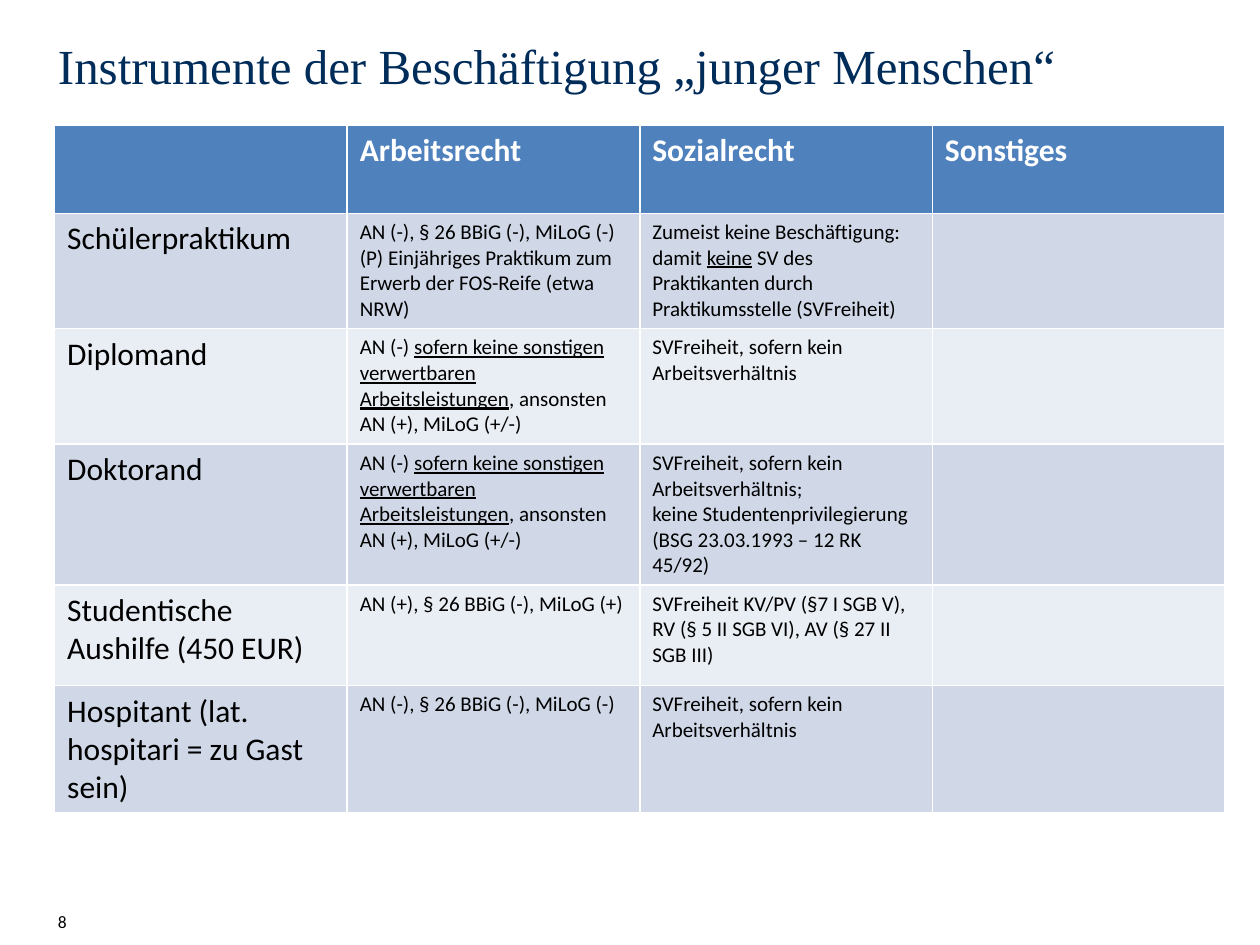
from dataclasses import dataclass
from typing import NamedTuple

from pptx import Presentation
from pptx.dml.color import RGBColor
from pptx.enum.text import MSO_ANCHOR, MSO_AUTO_SIZE, PP_ALIGN
from pptx.util import Pt


@dataclass(frozen=True)
class Theme:
    title_font: str = "Times New Roman"
    body_font: str = "Calibri"
    title_size: float = 28
    label_size: float = 18
    detail_size: float = 12
    number_size: float = 10
    title_color: str = "002C5A"
    text_color: str = "000000"
    header_text: str = "FFFFFF"
    header_fill: str = "4F81BD"
    band_fills: tuple[str, str] = ("D0D8E8", "E9EDF4")


class Box(NamedTuple):
    left: float
    top: float
    width: float
    height: float

    def lengths(self):
        return [Pt(value) for value in self]


class Piece(NamedTuple):
    text: str
    underline: bool = False


Paragraphs = list[list[Piece]]


class Instrument(NamedTuple):
    name: str
    labour_law: Paragraphs
    social_law: Paragraphs
    height: float


THEME = Theme()
TITLE_BOX = Box(30.24, 23, 669, 70.5)
TABLE_BOX = Box(31.2, 71.7, 668.8, 393)
NUMBER_BOX = Box(30.24, 517.7, 23, 18)
HEADER_HEIGHT = 50.2
HEADERS = ["", "Arbeitsrecht", "Sozialrecht", "Sonstiges"]


def plain(*texts: str) -> Paragraphs:
    return [[Piece(text)] for text in texts]


THESIS_RULE = [[
    Piece("AN (-) "),
    Piece("sofern keine sonstigen verwertbaren Arbeitsleistungen", True),
    Piece(", ansonsten AN (+), MiLoG (+/-)"),
]]
NO_CLAIMS = "AN (-), § 26 BBiG (-), MiLoG (-)"
EXEMPT = "SVFreiheit, sofern kein Arbeitsverhältnis"

INSTRUMENTS = [
    Instrument(
        "Schülerpraktikum",
        plain(NO_CLAIMS, "(P) Einjähriges Praktikum zum Erwerb der FOS-Reife (etwa NRW)"),
        [[Piece("Zumeist keine Beschäftigung: damit "), Piece("keine", True),
          Piece(" SV des Praktikanten durch Praktikumsstelle (SVFreiheit)")]],
        66,
    ),
    Instrument("Diplomand", THESIS_RULE, plain(EXEMPT), 66),
    Instrument(
        "Doktorand",
        THESIS_RULE,
        plain(EXEMPT + ";", "keine Studentenprivilegierung (BSG 23.03.1993 – 12 RK 45/92)"),
        80.4,
    ),
    Instrument(
        "Studentische Aushilfe (450 EUR)",
        plain("AN (+), § 26 BBiG (-), MiLoG (+)"),
        plain("SVFreiheit KV/PV (§7 I SGB V), RV (§ 5 II SGB VI), AV (§ 27 II SGB III)"),
        57.6,
    ),
    Instrument("Hospitant (lat. hospitari = zu Gast sein)", plain(NO_CLAIMS), plain(EXEMPT), 72.8),
]


def apply_format(target, **values) -> None:
    for name, value in values.items():
        setattr(target, name, value)


def style_font(font, name: str, size: float, color: str, **values) -> None:
    apply_format(font, name=name, size=Pt(size), **values)
    font.color.rgb = RGBColor.from_string(color)


def write(frame, paragraphs: Paragraphs, size: float, color: str, bold: bool = False) -> None:
    for index, pieces in enumerate(paragraphs):
        paragraph = frame.add_paragraph() if index else frame.paragraphs[0]
        for piece in pieces:
            run = paragraph.add_run()
            run.text = piece.text
            style_font(run.font, THEME.body_font, size, color, bold=bold)
            if piece.underline:
                run.font.underline = True


def fill_cell(cell, fill: str, paragraphs: Paragraphs, size: float, color: str,
              bold: bool = False) -> None:
    cell.fill.solid()
    cell.fill.fore_color.rgb = RGBColor.from_string(fill)
    if paragraphs:
        write(cell.text_frame, paragraphs, size, color, bold)


def add_title(slide, text: str) -> None:
    title = slide.shapes.title
    title.left, title.top, title.width, title.height = TITLE_BOX.lengths()
    frame = title.text_frame
    inset = Pt(2.88)
    apply_format(frame, text=text, word_wrap=True, auto_size=MSO_AUTO_SIZE.NONE,
                 vertical_anchor=MSO_ANCHOR.TOP, margin_left=inset, margin_right=inset,
                 margin_top=inset, margin_bottom=inset)
    paragraph = frame.paragraphs[0]
    apply_format(paragraph, alignment=PP_ALIGN.LEFT, line_spacing=Pt(28))
    style_font(paragraph.runs[0].font, THEME.title_font, THEME.title_size, THEME.title_color)


def add_instrument_table(slide) -> None:
    table = slide.shapes.add_table(
        len(INSTRUMENTS) + 1, len(HEADERS), *TABLE_BOX.lengths()
    ).table
    for column in table.columns:
        column.width = Pt(TABLE_BOX.width / len(HEADERS))

    table.rows[0].height = Pt(HEADER_HEIGHT)
    for cell, header in zip(table.rows[0].cells, HEADERS):
        fill_cell(cell, THEME.header_fill, plain(header) if header else [],
                  THEME.label_size, THEME.header_text, bold=True)

    for index, instrument in enumerate(INSTRUMENTS):
        row = table.rows[index + 1]
        row.height = Pt(instrument.height)
        fill = THEME.band_fills[index % 2]
        contents = [plain(instrument.name), instrument.labour_law, instrument.social_law, []]
        for column, (cell, paragraphs) in enumerate(zip(row.cells, contents)):
            size = THEME.detail_size if column else THEME.label_size
            fill_cell(cell, fill, paragraphs, size, THEME.text_color)


def add_page_number(slide, number: int) -> None:
    frame = slide.shapes.add_textbox(*NUMBER_BOX.lengths()).text_frame
    inset = Pt(2.88)
    apply_format(frame, word_wrap=True, vertical_anchor=MSO_ANCHOR.BOTTOM, margin_left=inset,
                 margin_right=0, margin_top=inset, margin_bottom=inset)
    write(frame, plain(str(number)), THEME.number_size, THEME.text_color)


def main() -> None:
    presentation = Presentation()
    apply_format(presentation, slide_width=Pt(720), slide_height=Pt(540))
    slide = presentation.slides.add_slide(presentation.slide_layouts.get_by_name("Title Only"))
    add_page_number(slide, 8)
    add_title(slide, "Instrumente der Beschäftigung „junger Menschen“")
    add_instrument_table(slide)
    presentation.save("out.pptx")


if __name__ == "__main__":
    main()
